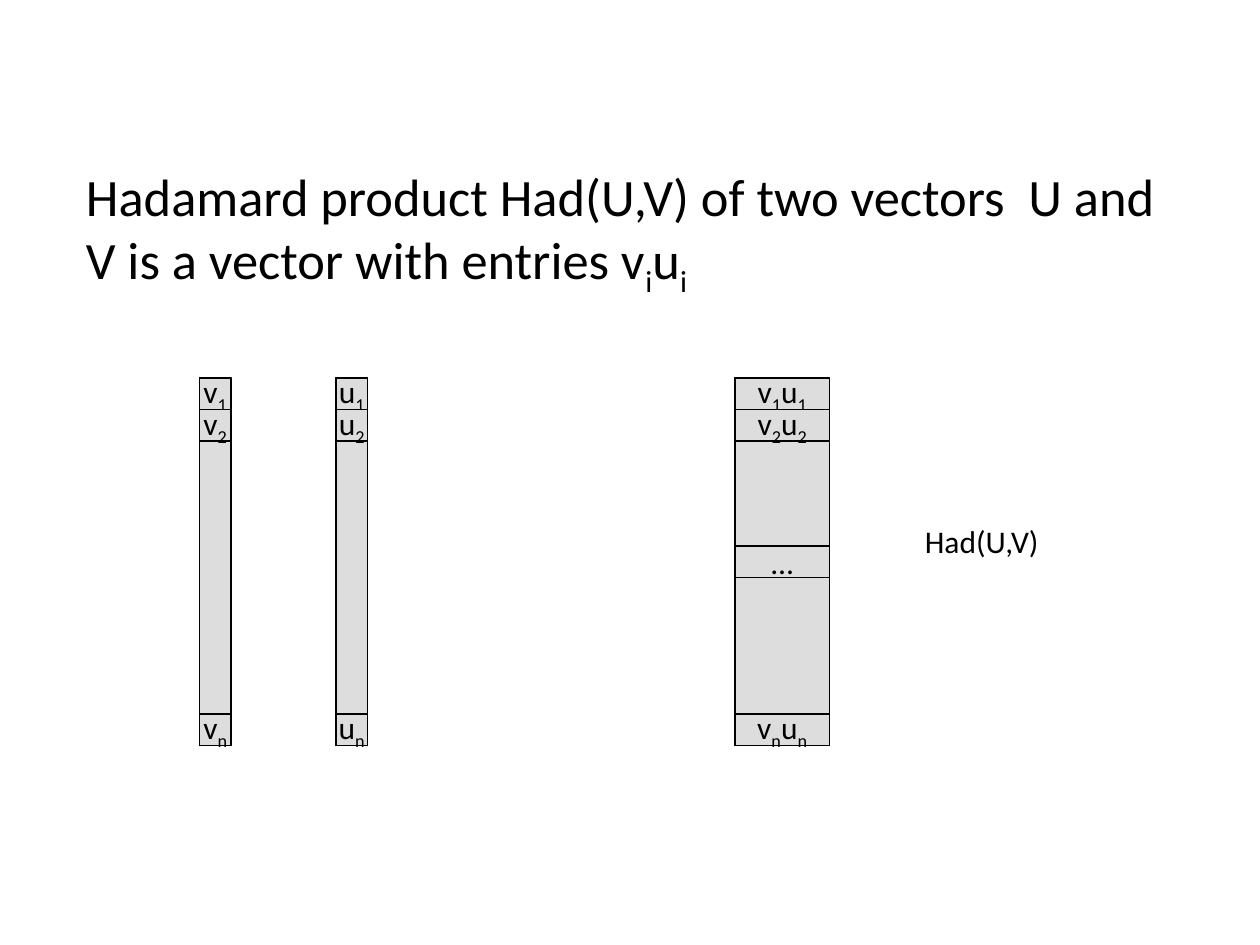
"""Build a slide that illustrates the Hadamard product of two vectors."""
from dataclasses import dataclass

from pptx import Presentation
from pptx.dml.color import RGBColor
from pptx.enum.shapes import MSO_SHAPE
from pptx.enum.text import MSO_ANCHOR, PP_ALIGN
from pptx.shapes.autoshape import Shape
from pptx.slide import Slide
from pptx.text.text import _Paragraph
from pptx.util import Emu, Pt

RECTANGLE = MSO_SHAPE.RECTANGLE
MIDDLE = MSO_ANCHOR.MIDDLE
CENTER = PP_ALIGN.CENTER

BLACK = RGBColor(0x00, 0x00, 0x00)
GRAY = RGBColor(0xDD, 0xDD, 0xDD)
FONT = "Calibri"
TITLE_SIZE = 30
LABEL_SIZE = 18
SUBSCRIPT = "-25000"

EMU_PER_PX = 7620
SLIDE_WIDTH, SLIDE_HEIGHT = 1200, 900
COLUMN_TOP, COLUMN_HEIGHT = 360, 350
CELL_HEIGHT = 30
ELLIPSIS_TOP = 520
ENTRY_TOPS = {
    "1": COLUMN_TOP,
    "2": COLUMN_TOP + CELL_HEIGHT,
    "n": COLUMN_TOP + COLUMN_HEIGHT - CELL_HEIGHT,
}


@dataclass(frozen=True)
class Box:
    left: int
    top: int
    width: int
    height: int

    def emu(self) -> tuple[Emu, ...]:
        lengths = (self.left, self.top, self.width, self.height)
        return tuple(Emu(length * EMU_PER_PX) for length in lengths)


@dataclass(frozen=True)
class Vector:
    left: int
    width: int
    letters: str


VECTORS = (Vector(190, 30, "v"), Vector(320, 30, "u"), Vector(700, 90, "vu"))
PRODUCT = VECTORS[-1]
TITLE_BOX = Box(70, 150, 1080, 594)
LABEL_BOX = Box(860, 470, 150, 90)
TITLE = (
    "Hadamard product Had(U,V) of two vectors  U and V is a vector with entries v",
    "i", "u", "i",
)


def write_pieces(paragraph: _Paragraph, pieces: tuple[str, ...], size: int) -> None:
    """Write the pieces as runs, every second one as a subscript."""
    for index, piece in enumerate(pieces):
        run = paragraph.add_run()
        run.text = piece
        run.font.name = FONT
        run.font.size = Pt(size)
        run.font.color.rgb = BLACK
        if index % 2:
            run.font._element.set("baseline", SUBSCRIPT)


def write_label(shape: Shape, pieces: tuple[str, ...]) -> None:
    """Centre an unwrapped label in a shape."""
    text_frame = shape.text_frame
    text_frame.word_wrap = False
    text_frame.vertical_anchor = MIDDLE
    paragraph = text_frame.paragraphs[0]
    paragraph.alignment = CENTER
    write_pieces(paragraph, pieces, LABEL_SIZE)


def add_cell(slide: Slide, box: Box, pieces: tuple[str, ...] = ()) -> None:
    """Add an outlined gray rectangle with an optional label."""
    shape = slide.shapes.add_shape(RECTANGLE, *box.emu())
    shape.shadow.inherit = False
    shape.fill.solid()
    shape.fill.fore_color.rgb = GRAY
    shape.line.color.rgb = BLACK
    shape.line.width = Pt(0.75)
    if pieces:
        write_label(shape, pieces)


def add_vector(slide: Slide, vector: Vector) -> None:
    """Add a vector column with its first, second and last entries."""
    add_cell(slide, Box(vector.left, COLUMN_TOP, vector.width, COLUMN_HEIGHT))
    for subscript, top in ENTRY_TOPS.items():
        pieces = tuple(piece for letter in vector.letters for piece in (letter, subscript))
        add_cell(slide, Box(vector.left, top, vector.width, CELL_HEIGHT), pieces)


def add_title(slide: Slide) -> None:
    """Add the definition above the vectors."""
    text_frame = slide.shapes.add_textbox(*TITLE_BOX.emu()).text_frame
    text_frame.word_wrap = True
    paragraph = text_frame.paragraphs[0]
    paragraph.space_before = Pt(6)
    write_pieces(paragraph, TITLE, TITLE_SIZE)


def main() -> None:
    """Build and save the presentation."""
    presentation = Presentation()
    presentation.slide_width = Emu(SLIDE_WIDTH * EMU_PER_PX)
    presentation.slide_height = Emu(SLIDE_HEIGHT * EMU_PER_PX)
    slide = presentation.slides.add_slide(presentation.slide_layouts[6])
    add_title(slide)
    for vector in VECTORS:
        add_vector(slide, vector)
    add_cell(slide, Box(PRODUCT.left, ELLIPSIS_TOP, PRODUCT.width, CELL_HEIGHT), ("…",))
    write_label(slide.shapes.add_textbox(*LABEL_BOX.emu()), ("Had(U,V)",))
    presentation.save("out.pptx")


if __name__ == "__main__":
    main()
